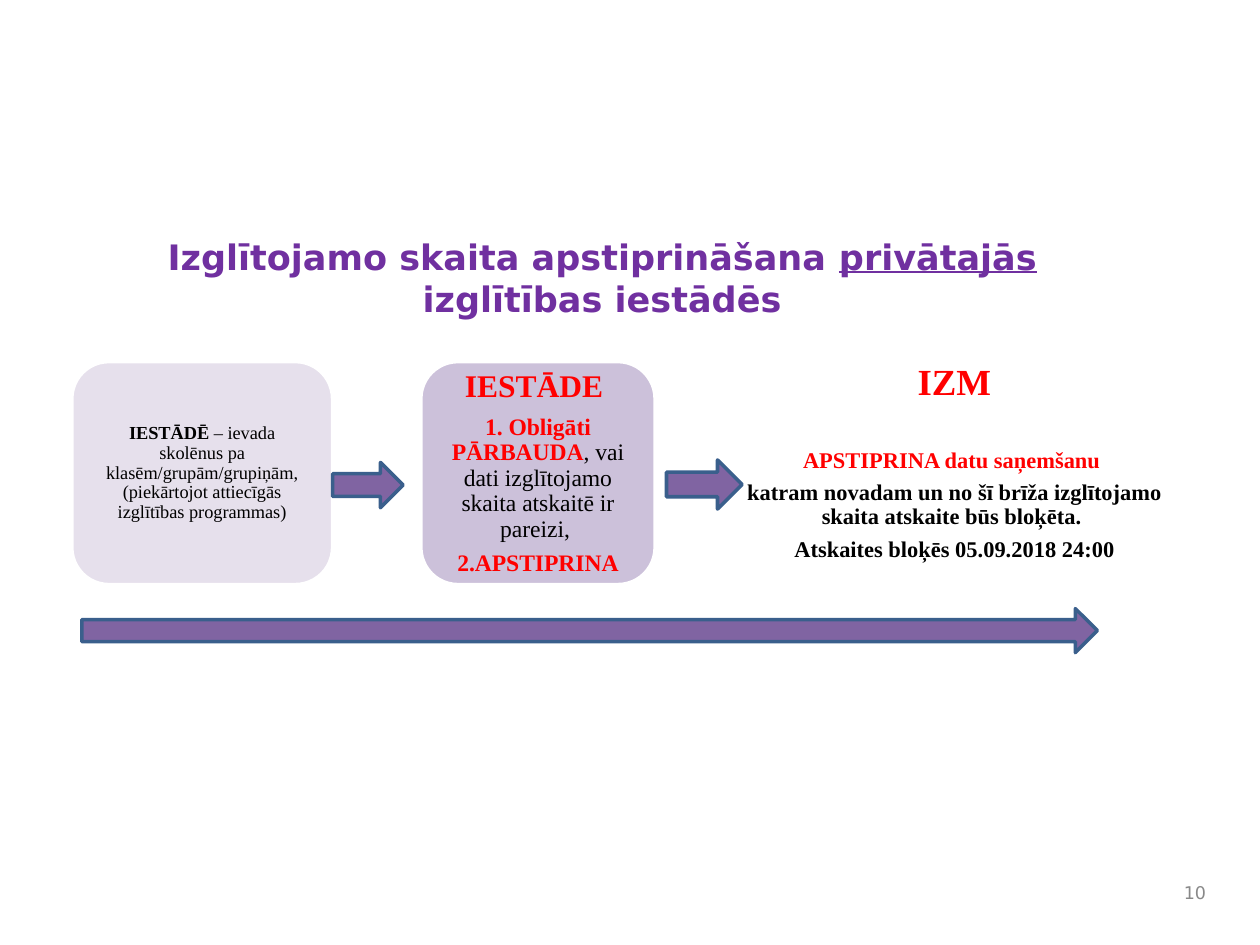
from pptx import Presentation
from pptx.dml.color import RGBColor
from pptx.enum.shapes import MSO_SHAPE
from pptx.enum.text import MSO_ANCHOR, PP_ALIGN
from pptx.util import Inches, Pt

ROUNDED, ARROW = MSO_SHAPE.ROUNDED_RECTANGLE, MSO_SHAPE.RIGHT_ARROW
TOP, MIDDLE = MSO_ANCHOR.TOP, MSO_ANCHOR.MIDDLE
CENTER, RIGHT = PP_ALIGN.CENTER, PP_ALIGN.RIGHT
SANS, SERIF = "DejaVu Sans", "Times New Roman"
COLORS = {
    "title": "7030A0", "red": "FF0000", "black": "000000", "grey": "898989",
    "white": "FFFFFF", "pale": "E6E0EC", "lilac": "CCC1DA",
    "arrow": "8064A2", "edge": "3A5F8C",
}


def rgb(name):
    return RGBColor.from_string(COLORS[name])


class Deck:
    """Holds the style and the current slide."""

    def __init__(self, prs):
        self.slide = prs.slides.add_slide(prs.slide_layouts[5])

    def frame(self, sp, inset, anchor=MIDDLE):
        tf = sp.text_frame
        tf.word_wrap = True
        tf.vertical_anchor = anchor
        tf.margin_left = tf.margin_right = Inches(inset)
        tf.margin_top = tf.margin_bottom = Inches(inset)
        return tf

    def add_text(self, tf, paragraphs, font=SERIF, align=CENTER, spacing=0.9):
        """Each paragraph is (space after, runs); a run is (text, size, color, style)."""
        for i, (after, runs) in enumerate(paragraphs):
            p = tf.paragraphs[0] if i == 0 else tf.add_paragraph()
            p.alignment = align
            p.line_spacing = spacing
            p.space_before = Pt(0)
            p.space_after = Pt(after)
            for text, size, color, style in runs:
                r = p.add_run()
                r.text = text
                r.font.name = font
                r.font.size = Pt(size)
                r.font.color.rgb = rgb(color)
                r.font.bold = "b" in style
                r.font.underline = "u" in style

    def title(self, x, y, w, h, runs):
        sp = self.slide.shapes.title
        sp.left, sp.top, sp.width, sp.height = map(Inches, (x, y, w, h))
        self.add_text(self.frame(sp, 0.05, TOP), [(0, runs)], SANS, spacing=1.0)

    def text(self, x, y, w, h, paragraphs, inset, **style):
        sp = self.slide.shapes.add_textbox(*map(Inches, (x, y, w, h)))
        self.add_text(self.frame(sp, inset), paragraphs, **style)

    def shape(self, kind, x, y, w, h, fill, line):
        sp = self.slide.shapes.add_shape(kind, *map(Inches, (x, y, w, h)))
        sp.shadow.inherit = False
        sp.fill.solid()
        sp.fill.fore_color.rgb = rgb(fill)
        sp.line.color.rgb = rgb(line)
        sp.line.width = Pt(2)
        return sp

    def box(self, x, w, fill, paragraphs, inset):
        sp = self.shape(ROUNDED, x, 2.87, w, 1.77, fill, "white")
        self.add_text(self.frame(sp, inset), paragraphs)

    def arrow(self, x, y, w, h):
        self.shape(ARROW, x, y, w, h, "arrow", "edge")


def main():
    prs = Presentation()
    prs.slide_width, prs.slide_height = Inches(10), Inches(7.5)
    deck = Deck(prs)

    # Title
    deck.title(1.07, 1.82, 7.42, 0.77, [
        ("Izglītojamo skaita apstiprināšana ", 20, "title", "b"),
        ("privātajās", 20, "title", "bu"),
        (" izglītības iestādēs", 20, "title", "b"),
    ])

    # Ministry step
    deck.text(5.74, 2.17, 3.67, 3.01, [
        (26, [("IZM", 21, "red", "b")]),
        (4.5, [("APSTIPRINA datu saņemšanu ", 12.8, "red", "b")]),
        (4.5, [("katram novadam un no šī brīža izglītojamo skaita "
                "atskaite būs bloķēta. ", 12.8, "black", "b")]),
        (4.5, [("Atskaites bloķēs 05.09.2018 24:00", 12.8, "black", "b")]),
    ], inset=0.02)

    # Institution steps
    deck.box(0.57, 2.07, "pale", [
        (3.7, [("IESTĀDĒ", 10.5, "black", "b"),
               (" – ievada skolēnus pa klasēm/grupām/grupiņām, "
                "(piekārtojot attiecīgās izglītības programmas)",
                10.5, "black", "")]),
    ], inset=0.12)
    deck.box(3.34, 1.86, "lilac", [
        (6.3, [("IESTĀDE ", 18, "red", "b")]),
        (4.7, [("1. Obligāti PĀRBAUDA", 13.5, "red", "b"),
               (", vai dati izglītojamo skaita atskaitē ir pareizi, ",
                13.5, "black", "")]),
        (4.7, [("2.APSTIPRINA", 13.5, "red", "b")]),
    ], inset=0.07)

    # Arrows: the whole process, then step to step
    deck.arrow(0.65, 4.83, 8.06, 0.35)
    deck.arrow(2.64, 3.67, 0.56, 0.36)
    deck.arrow(5.29, 3.65, 0.6, 0.39)

    # Page number
    deck.text(9.09, 6.92, 0.58, 0.33, [(0, [("10", 10, "grey", "")])],
              inset=0.1, font=SANS, align=RIGHT, spacing=1.0)

    prs.save("out.pptx")


if __name__ == "__main__":
    main()
